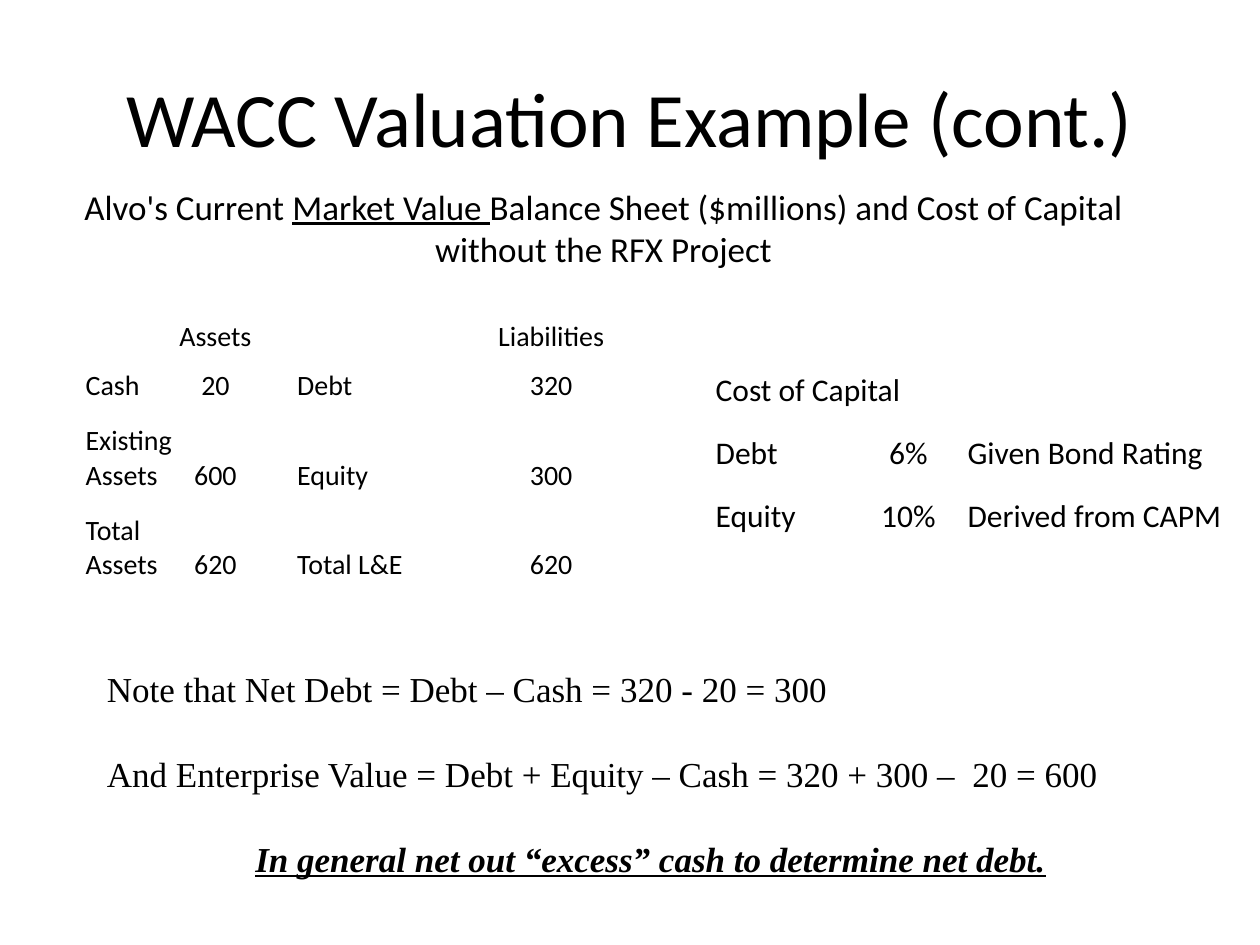
from dataclasses import dataclass

import pptx
import pptx.dml.color
import pptx.enum.text
import pptx.util

Inches = pptx.util.Inches
Pt = pptx.util.Pt
ALIGN = pptx.enum.text.PP_ALIGN
ANCHOR = pptx.enum.text.MSO_ANCHOR

COLORS = {"text": "000000"}
BODY_FONT = "Calibri"
NOTE_FONT = "Times New Roman"


@dataclass
class Span:
    text: str
    underline: bool = False
    emphasis: bool = False


@dataclass
class Line:
    spans: list[Span]
    align: ALIGN = ALIGN.CENTER
    space_before: float = 0


@dataclass
class Grid:
    left: float
    top: float
    columns: list[float]
    heights: list[float]
    size: float
    rows: list[list[str]]
    centered: set[int]
    merges: list[tuple[int, int, int]]  # row, first column, last column


def write_line(paragraph, line: Line, size: float, font: str) -> None:
    paragraph.alignment = line.align
    paragraph.space_before = Pt(line.space_before)
    for span in line.spans:
        run = paragraph.add_run()
        run.text = span.text
        run.font.size = Pt(size)
        run.font.name = font
        run.font.color.rgb = pptx.dml.color.RGBColor.from_string(COLORS["text"])
        run.font.underline = span.underline
        run.font.bold = run.font.italic = span.emphasis


def add_text(slide, box: tuple[float, float, float, float], lines: list[Line],
             size: float, font: str = BODY_FONT, anchor: ANCHOR = ANCHOR.TOP) -> None:
    frame = slide.shapes.add_textbox(*map(Inches, box)).text_frame
    frame.word_wrap = True
    frame.vertical_anchor = anchor
    for index, line in enumerate(lines):
        paragraph = frame.add_paragraph() if index else frame.paragraphs[0]
        write_line(paragraph, line, size, font)


def add_grid(slide, grid: Grid) -> None:
    """Add an unfilled, unbanded table with bottom-anchored text."""
    table = slide.shapes.add_table(
        len(grid.heights), len(grid.columns), Inches(grid.left), Inches(grid.top),
        Inches(sum(grid.columns)), Inches(sum(grid.heights))).table
    table.first_row = table.horz_banding = False
    for column, width in zip(table.columns, grid.columns):
        column.width = Inches(width)
    for row, height in zip(table.rows, grid.heights):
        row.height = Inches(height)
    for row, first, last in grid.merges:
        table.cell(row, first).merge(table.cell(row, last))
    for r, texts in enumerate(grid.rows):
        for c, text in enumerate(texts):
            cell = table.cell(r, c)
            cell.fill.background()
            cell.vertical_anchor = ANCHOR.BOTTOM
            cell.margin_left = cell.margin_right = cell.margin_top = Inches(0.01)
            cell.margin_bottom = 0
            paragraph = cell.text_frame.paragraphs[0]
            paragraph.font.size = Pt(grid.size)
            if text:
                align = ALIGN.CENTER if c in grid.centered else ALIGN.LEFT
                write_line(paragraph, Line([Span(text)], align), grid.size, BODY_FONT)


BALANCE_SHEET = Grid(
    0.67, 2.42, [0.72, 0.64, 0.32, 1.4, 1.25], [0.39, 0.39, 0.71, 0.71], 16,
    [["", "Assets", "", "", "Liabilities"],
     ["Cash", "20", "", "Debt", "320"],
     ["Existing Assets", "600", "", "Equity", "300"],
     ["Total Assets", "620", "", "Total L&E", "620"]],
    {1, 4}, [])

COST_OF_CAPITAL = Grid(
    5.67, 2.75, [1.08, 0.92, 1.25, 1.08], [0.5] * 3, 18,
    [["Cost of Capital", "", "", ""],
     ["Debt", "6%", "Given Bond Rating", ""],
     ["Equity", "10%", "Derived from CAPM", ""]],
    {1}, [(0, 0, 1), (1, 2, 3), (2, 2, 3)])

SUBTITLE = Line([
    Span("Alvo's Current "),
    Span("Market Value ", underline=True),
    Span("Balance Sheet ($millions) and Cost of Capital without the RFX Project"),
])

NOTE_GAP = 24.5
NET_DEBT_NOTES = [
    Line([Span("Note that Net Debt = Debt – Cash = 320 - 20 = 300")], ALIGN.LEFT),
    Line([Span("And Enterprise Value = Debt + Equity – Cash = 320 + 300 –  20 = 600")],
         ALIGN.LEFT, NOTE_GAP),
    Line([Span("In general net out “excess” cash to determine net debt.",
               underline=True, emphasis=True)], space_before=NOTE_GAP),
]


def main() -> None:
    deck = pptx.Presentation()
    deck.slide_width, deck.slide_height = Inches(10), Inches(7.5)
    slide = deck.slides.add_slide(deck.slide_layouts[6])
    add_text(slide, (0.5, 0.3, 9, 1.25), [Line([Span("WACC Valuation Example (cont.)")])],
             44, anchor=ANCHOR.MIDDLE)
    add_text(slide, (0.75, 5.25, 8.83, 1.78), NET_DEBT_NOTES, 20, NOTE_FONT)
    for grid in (BALANCE_SHEET, COST_OF_CAPITAL):
        add_grid(slide, grid)
    add_text(slide, (0.5, 1.42, 8.58, 0.77), [SUBTITLE], 20)
    deck.save("out.pptx")


if __name__ == "__main__":
    main()
